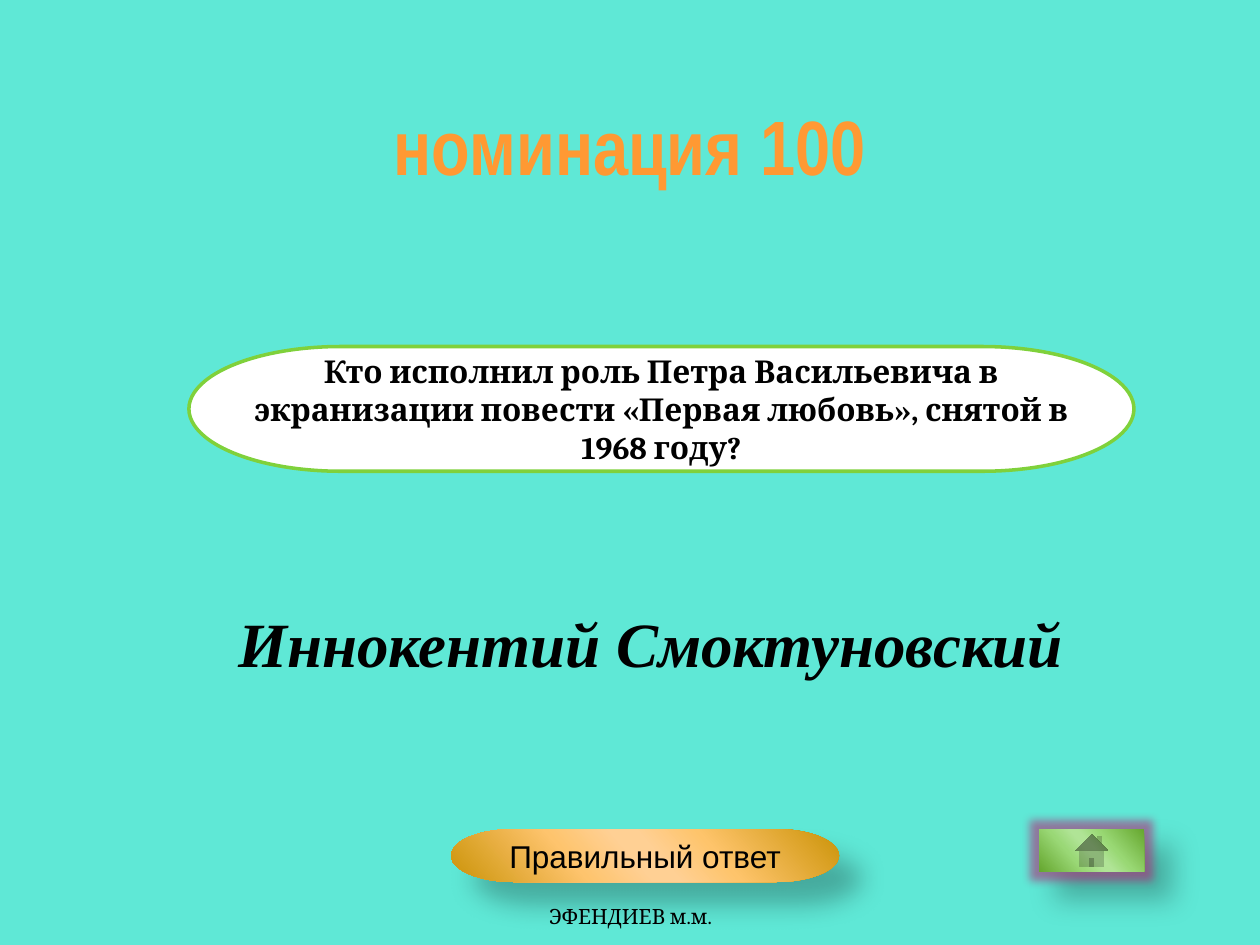
"""Build a quiz slide with a question, its answer and two buttons."""
import pptx
import pptx.util
import pptx.dml.color
import pptx.enum.shapes
import pptx.enum.text
import pptx.oxml
import pptx.oxml.ns

W, H = 10, 7.5
SHAPES = pptx.enum.shapes.MSO_SHAPE
ANCHOR = pptx.enum.text.MSO_ANCHOR
NS = pptx.oxml.ns.nsdecls("a")

TITLE = ("номинация 100", (0.25, 0.107, 0.5, 0.093),
         dict(size=44, font="Arial Narrow", color="FF9933", bold=True))
QUESTION = ("Кто исполнил роль Петра Васильевича в экранизации повести «Первая любовь», снятой в 1968 году?",
            (0.15, 0.367, 0.75, 0.132), dict(size=18, font="Cambria", bold=True))
ANSWER = ("Иннокентий Смоктуновский", (0.175, 0.633, 0.683, 0.095),
          dict(size=36, font="Times New Roman", bold=True, italic=True, anchor=ANCHOR.TOP))
BUTTON = ("Правильный ответ", (0.358, 0.877, 0.308, 0.056), dict(size=18, font="Arial"))
FOOTER = ("ЭФЕНДИЕВ м.м.", (0.342, 0.936, 0.317, 0.053),
          dict(size=12, font="Cambria", anchor=ANCHOR.BOTTOM))
HOME_BOX = (0.825, 0.877, 0.083, 0.045)
ORANGE = [(0, "CB9308"), (33, "FEC46B"), (47, "FFD094"), (53, "FFD094"), (68, "FEC46D"), (100, "CB9308")]
GREEN = [(0, "66A72F"), (33, "99D874"), (47, "B0E496"), (53, "B0E496"), (68, "9AD876"), (100, "66A72F")]


def rgb(color):
    return pptx.dml.color.RGBColor.from_string(color)


def place(box):
    return [pptx.util.Inches(round(share * side, 2)) for share, side in zip(box, (W, H, W, H))]


def write(sp, text, size, font, color="000000", bold=False, italic=False, anchor=ANCHOR.MIDDLE):
    tf = sp.text_frame
    tf.word_wrap = True
    tf.auto_size = pptx.enum.text.MSO_AUTO_SIZE.NONE
    tf.vertical_anchor = anchor
    p = tf.paragraphs[0]
    p.alignment = pptx.enum.text.PP_ALIGN.CENTER
    r = p.add_run()
    r.text = text
    r.font.size, r.font.name = pptx.util.Pt(size), font
    r.font.bold, r.font.italic = bold, italic
    r.font.color.rgb = rgb(color)


def add_shape(s, kind, box):
    sp = s.shapes.add_shape(kind, *place(box))
    sp.shadow.inherit = False
    return sp


def add_text(s, text, box, style):
    write(s.shapes.add_textbox(*place(box)), text, **style)


def add_button(s, kind, box, stops, glow=None):
    sp = add_shape(s, kind, box)
    sp.line.fill.background()
    sp.fill.background()
    pr = sp.element.spPr
    gs = "".join(f'<a:gs pos="{pos * 1000}"><a:srgbClr val="{color}"/></a:gs>' for pos, color in stops)
    pr.replace(pr.find(pptx.oxml.ns.qn("a:noFill")), pptx.oxml.parse_xml(
        f'<a:gradFill {NS} rotWithShape="1"><a:gsLst>{gs}</a:gsLst>'
        f'<a:lin ang="{139 * 60000}" scaled="0"/></a:gradFill>'))
    effects = pr.find(pptx.oxml.ns.qn("a:effectLst"))
    if glow:
        effects.append(pptx.oxml.parse_xml(
            f'<a:glow {NS} rad="{pptx.util.Pt(10)}"><a:srgbClr val="{glow}">'
            '<a:alpha val="60000"/></a:srgbClr></a:glow>'))
    effects.append(pptx.oxml.parse_xml(
        f'<a:outerShdw {NS} blurRad="{pptx.util.Pt(15)}" dist="{pptx.util.Pt(18)}" dir="{45 * 60000}" '
        'algn="ctr" rotWithShape="0"><a:srgbClr val="000000"><a:alpha val="26000"/></a:srgbClr></a:outerShdw>'))
    return sp


def main():
    prs = pptx.Presentation()
    prs.slide_width, prs.slide_height = pptx.util.Inches(W), pptx.util.Inches(H)
    s = prs.slides.add_slide(prs.slide_layouts[5])
    s.background.fill.solid()
    s.background.fill.fore_color.rgb = rgb("5FE8D6")

    add_text(s, *ANSWER)

    text, box, style = QUESTION
    sp = add_shape(s, SHAPES.FLOWCHART_TERMINATOR, box)
    sp.fill.solid()
    sp.fill.fore_color.rgb = rgb("FFFFFF")
    sp.line.color.rgb = rgb("7FD13B")
    sp.line.width = pptx.util.Pt(2)
    write(sp, text, **style)

    text, box, style = TITLE
    title = s.shapes.title
    title.left, title.top, title.width, title.height = place(box)
    write(title, text, **style)

    text, box, style = BUTTON
    write(add_button(s, SHAPES.FLOWCHART_TERMINATOR, box, ORANGE), text, **style)
    add_button(s, SHAPES.ACTION_BUTTON_HOME, HOME_BOX, GREEN, glow="B0307A")
    add_text(s, *FOOTER)
    prs.save("out.pptx")


if __name__ == "__main__":
    main()
